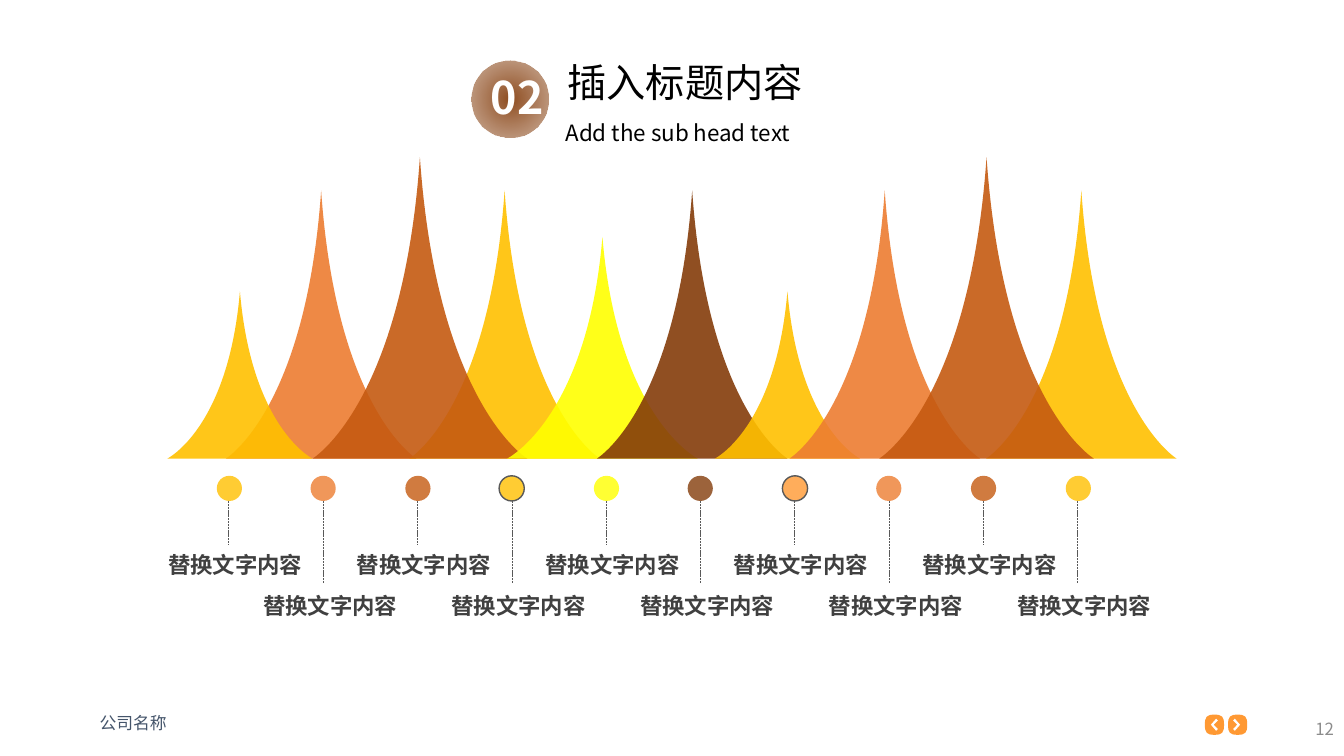
import pptx
import pptx.util
import pptx.oxml
import pptx.oxml.ns
import pptx.dml.color
import pptx.enum.dml
import pptx.enum.shapes
import pptx.enum.text

PX = 9144  # EMU per px, 100 px to the inch
COLOURS = {
    "gold": "FFC000", "orange": "ED7D31", "rust": "C55A11", "yellow": "FFFF00",
    "brown": "843C0B", "amber": "FF9933", "white": "FFFFFF", "black": "000000",
    "slate": "44546A", "label": "404040", "line": "595959", "number": "8C8C8C",
}
SANS = "Noto Sans CJK SC"
ALIGN = pptx.enum.text.PP_ALIGN
SHAPE = pptx.enum.shapes.MSO_SHAPE
qn = pptx.oxml.ns.qn


def paint(shape, colour, opacity=100):
    """Fill a shape with a flat colour, without outline or shadow."""
    shape.shadow.inherit = False
    shape.line.fill.background()
    shape.fill.solid()
    shape.fill.fore_color.rgb = pptx.dml.color.RGBColor.from_string(COLOURS[colour])
    if opacity < 100:
        colour_element = shape._element.spPr.find(qn("a:solidFill")).find(qn("a:srgbClr"))
        alpha = colour_element.makeelement(qn("a:alpha"), {"val": str(opacity * 1000)})
        colour_element.append(alpha)


def write(shape, text, size, colour, font=SANS, bold=False, align=ALIGN.LEFT, wrap=True):
    """Set a shape's single line of text and format it."""
    frame = shape.text_frame
    frame.text = text
    frame.word_wrap = wrap
    frame.auto_size = pptx.enum.text.MSO_AUTO_SIZE.SHAPE_TO_FIT_TEXT
    frame.vertical_anchor = pptx.enum.text.MSO_ANCHOR.TOP
    paragraph = frame.paragraphs[0]
    paragraph.alignment = align
    run = paragraph.runs[0]
    run.font.name = font
    run.font.size = pptx.util.Pt(size)
    run.font.bold = bold
    run.font.color.rgb = pptx.dml.color.RGBColor.from_string(COLOURS[colour])
    properties = run.font._element
    properties.append(properties.makeelement(qn("a:ea"), {"typeface": SANS}))


presentation = pptx.Presentation()
presentation.slide_width = 1333 * PX
presentation.slide_height = 750 * PX
slide = presentation.slides.add_slide(presentation.slide_layouts[5])
shapes = slide.shapes

# Heading
badge = shapes.add_shape(SHAPE.OVAL, 468 * PX, 60 * PX, 76 * PX, 76 * PX)
paint(badge, "brown")
radial_fill = pptx.oxml.parse_xml(
    f'<a:gradFill {pptx.oxml.ns.nsdecls("a")} rotWithShape="1"><a:gsLst>'
    + "".join(
        f'<a:gs pos="{position}"><a:srgbClr val="{COLOURS["brown"]}">'
        f'<a:alpha val="{alpha}"/></a:srgbClr></a:gs>'
        for position, alpha in ((0, 91000), (100000, 39000))
    )
    + '</a:gsLst><a:path path="circle">'
    '<a:fillToRect l="50000" t="50000" r="50000" b="50000"/></a:path></a:gradFill>'
)
badge_properties = badge._element.spPr
badge_properties.replace(badge_properties.find(qn("a:solidFill")), radial_fill)

title = shapes.title
title.left, title.top, title.width, title.height = 553 * PX, 53 * PX, 256 * PX, 57 * PX
write(title, "插入标题内容", 28, "black", wrap=False)
badge_number = shapes.add_textbox(477 * PX, 64 * PX, 92 * PX, 64 * PX)
write(badge_number, "02", 32, "white", bold=True)
subtitle = shapes.add_textbox(551 * PX, 113 * PX, 259 * PX, 37 * PX)
write(subtitle, "Add the sub head text", 16, "black", wrap=False)

# Outlines in a unit square: a start point, then lines (1 point) and curves (3 points)
PEAK = [
    [(1, 1)],
    [(1, 1), (0.58, 0.82), (0.5, 0)],
    [(0.42, 0.82), (0, 1), (0, 1)],
    [(1, 1)],
]
BUTTON = [
    [(0.5, 0)],
    [(0.1, 0), (0, 0.1), (0, 0.5)],
    [(0, 0.9), (0.1, 1), (0.5, 1)],
    [(0.9, 1), (1, 0.9), (1, 0.5)],
    [(1, 0.1), (0.9, 0), (0.5, 0)],
]
BACK = [[(0.75, 0)], [(1, 0.15)], [(0.4, 0.5)], [(1, 0.85)], [(0.75, 1)], [(0, 0.5)]]
FORWARD = [[(1 - x, y)] for [(x, y)] in BACK]

# From back to front: outline, left, top, width, height, colour, opacity
BASE = 455
outlines = [
    (BUTTON, 1195, 709, 19, 20, "amber", 100), (BACK, 1201, 713, 7, 12, "white", 100),
    (BUTTON, 1218, 709, 19, 20, "amber", 100), (FORWARD, 1223, 713, 7, 12, "white", 100),
]
for left, top, width, colour in (
    (224, 189, 189, "orange"), (406, 189, 189, "gold"), (166, 289, 144, "gold"),
    (310, 156, 213, "rust"), (503, 235, 189, "yellow"), (592, 189, 189, "brown"),
    (709, 289, 144, "gold"), (783, 189, 189, "orange"), (978, 189, 189, "gold"),
    (872, 156, 213, "rust"),
):
    outlines.append((PEAK, left, top, width, BASE - top, colour, 90))

for outline, left, top, width, height, colour, opacity in outlines:
    corners = [(round((left + x * width) * PX), round((top + y * height) * PX))
               for x, y in (segment[-1] for segment in outline)]
    builder = shapes.build_freeform(*corners[0])
    builder.add_line_segments(corners[1:], close=True)
    shape = builder.convert_to_shape()
    lines = list(shape._element.iter(qn("a:lnTo")))
    for line, segment in zip(lines, outline[1:]):
        if len(segment) == 3:
            curve = line.makeelement(qn("a:cubicBezTo"), {})
            for x, y in segment:
                point = {"x": str(round(x * width * PX)), "y": str(round(y * height * PX))}
                curve.append(curve.makeelement(qn("a:pt"), point))
            line.getparent().replace(line, curve)
    paint(shape, colour, opacity)

# Dots with leader lines and labels on two alternating levels
DOT = 25
DOT_TOP = 472
DOT_COLOURS = ["gold", "orange", "rust", "gold", "yellow",
               "brown", "amber", "orange", "rust", "gold"]
OUTLINED_DOTS = (3, 6)
line_colour = pptx.dml.color.RGBColor.from_string(COLOURS["line"])
for index, colour in enumerate(DOT_COLOURS):
    low = index % 2
    shift = round(index * 842 / 9)
    centre = 227 + shift
    dot_left = 215 + index * 842 // 9
    dot = shapes.add_shape(SHAPE.OVAL, dot_left * PX, DOT_TOP * PX, DOT * PX, DOT * PX)
    paint(dot, colour, 80)
    if index in OUTLINED_DOTS:
        dot.line.color.rgb = line_colour
        dot.line.width = pptx.util.Pt(1)

    leader = shapes.add_connector(
        pptx.enum.shapes.MSO_CONNECTOR.STRAIGHT,
        centre * PX, (DOT_TOP + DOT) * PX, centre * PX, (540 + 39 * low) * PX)
    leader.line.color.rgb = line_colour
    leader.line.width = pptx.util.Pt(0.5)
    leader.line.dash_style = pptx.enum.dml.MSO_LINE.SQUARE_DOT
    leader_properties = leader._element.spPr
    leader_properties.append(leader_properties.makeelement(qn("a:effectLst"), {}))

    label = shapes.add_textbox((167 + shift) * PX, (541 + 41 * low) * PX, 133 * PX, 32 * PX)
    write(label, "替换文字内容", 16, "label", "Arial", True, ALIGN.CENTER, False)
    frame = label.text_frame
    frame.margin_left = frame.margin_top = frame.margin_right = frame.margin_bottom = 0
    frame.paragraphs[0].line_spacing = 1.2

# Footer
company = shapes.add_textbox(89 * PX, 702 * PX, 200 * PX, 30 * PX)
write(company, "公司名称", 12, "slate", "Lato")
page_number = shapes.add_textbox(1033 * PX, 703 * PX, 300 * PX, 40 * PX)
write(page_number, "12", 12, "number", align=ALIGN.RIGHT)
page_number.text_frame.auto_size = pptx.enum.text.MSO_AUTO_SIZE.NONE
page_number.text_frame.vertical_anchor = pptx.enum.text.MSO_ANCHOR.MIDDLE

presentation.save("out.pptx")
